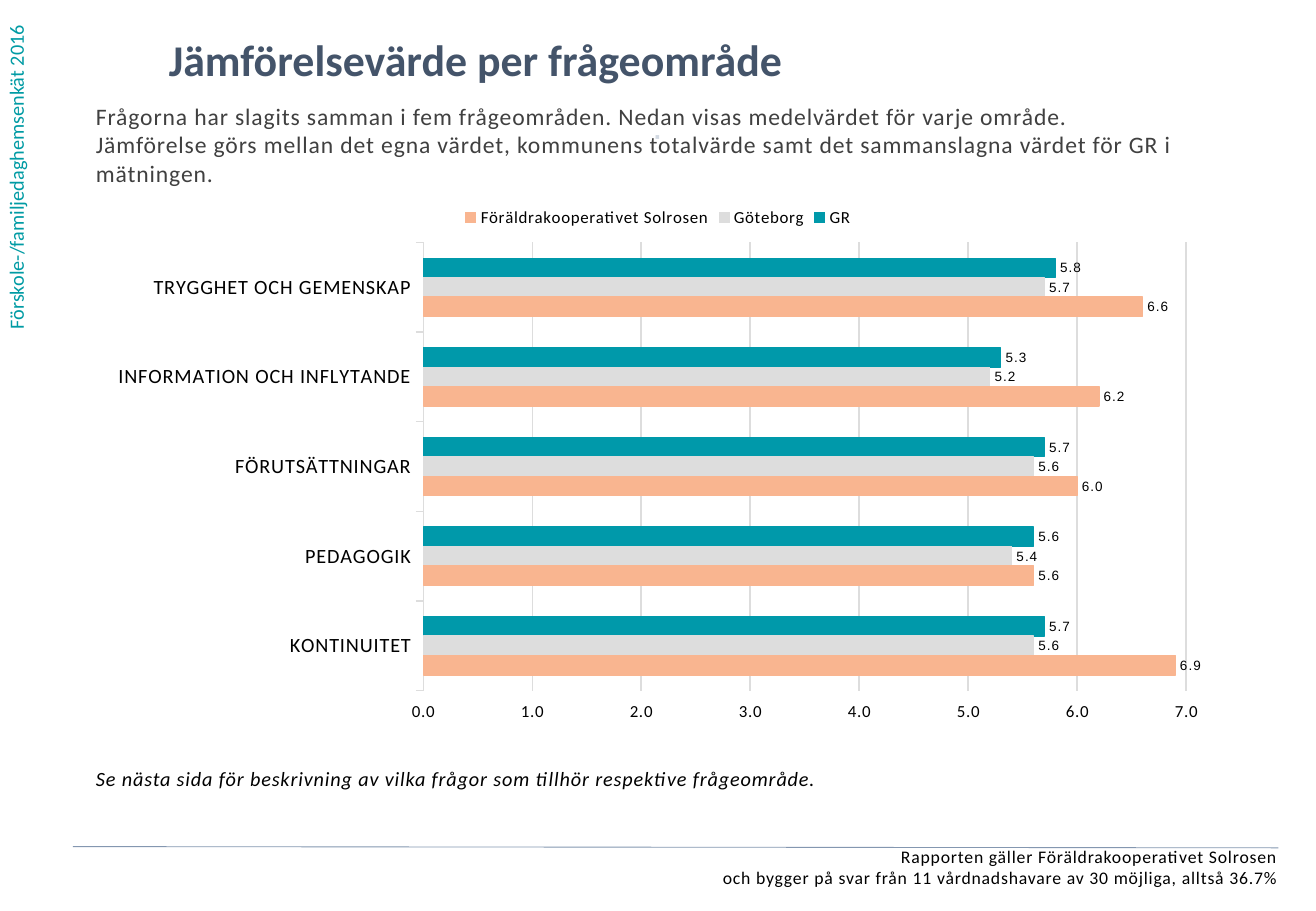
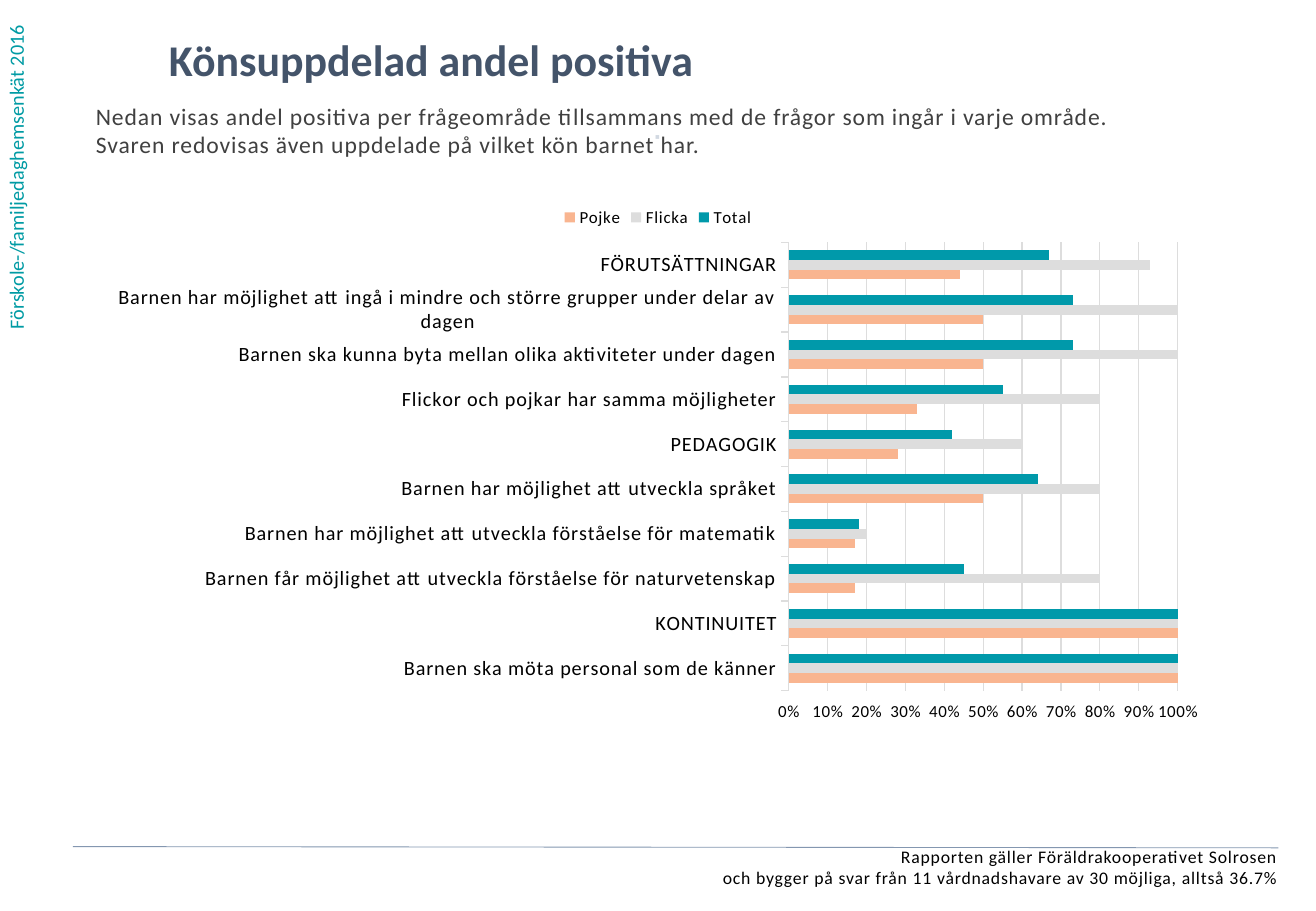
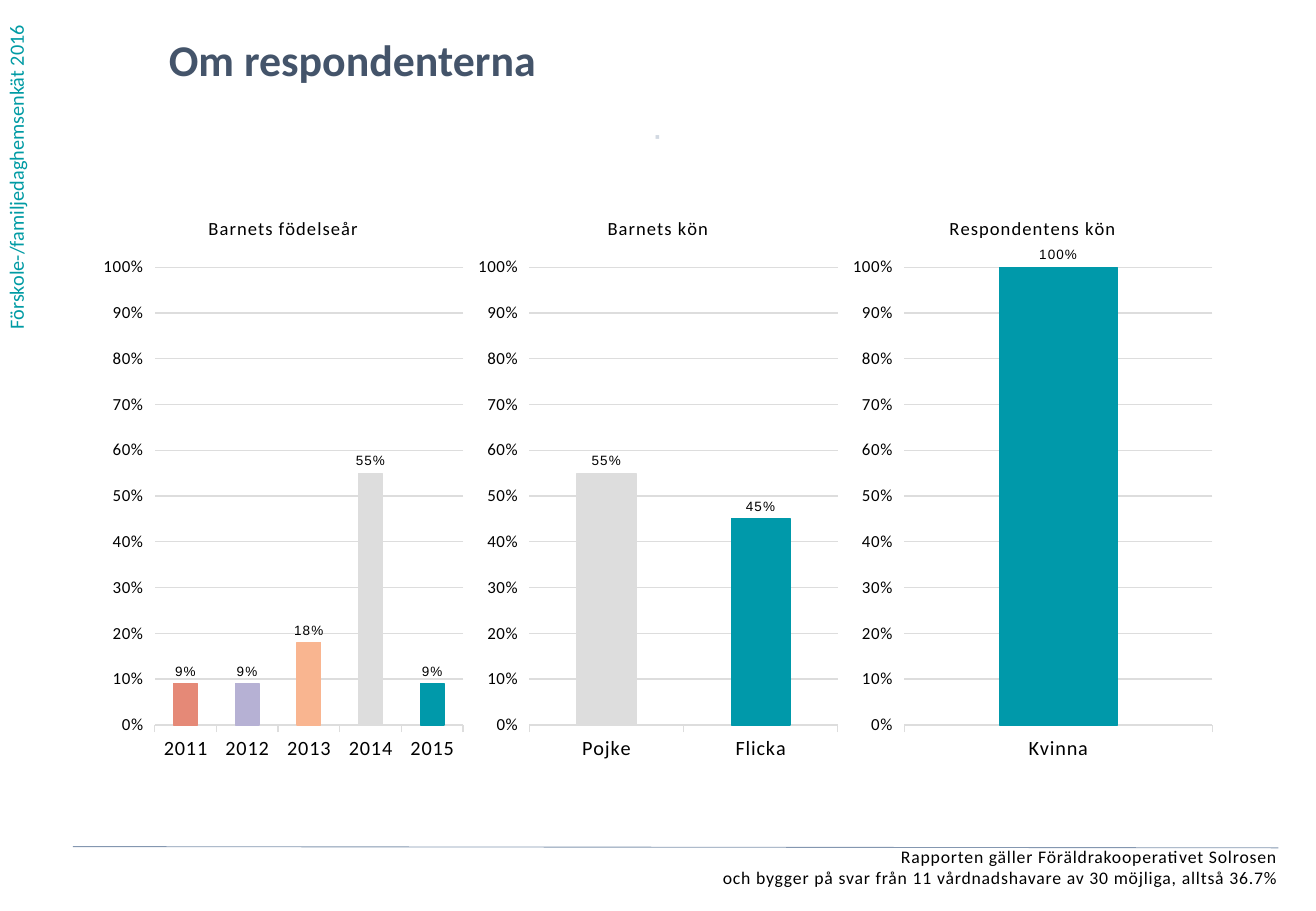
"""Build three survey report slides with shared page furniture and native charts."""
from copy import deepcopy
from dataclasses import dataclass
from typing import Any

from lxml import etree
from pptx import Presentation
from pptx import util as u
from pptx.chart import data as chart_data
from pptx.dml.color import RGBColor
from pptx.enum import chart as ch, shapes, text
from pptx.oxml import ns

WIDTH, HEIGHT = u.Inches(10.83), u.Inches(7.5)
TEAL, GREY, PEACH, LILAC, CORAL = "0099AA", "DDDDDD", "F9B590", "B6B1D4", "E58977"
BLACK = "000000"
LEFT, TOP, CONTENT_WIDTH = 7.29, 21.33, 85.41
SCHOOL = "Föräldrakooperativet Solrosen"
SCORE, PERCENT = "0.0;0.0", "0%;0%"


@dataclass(frozen=True)
class Box:
    """Place on the slide, in percent of its width and height."""
    left: float
    top: float
    width: float
    height: float

    def emu(self) -> tuple[int, int, int, int]:
        """Give the place as lengths."""
        return across(self.left), down(self.top), across(self.width), down(self.height)


@dataclass(frozen=True)
class TextStyle:
    """Look of one kind of text."""
    size: float
    color: str
    bold: bool = False
    italic: bool = False
    spaced: bool = True
    align: text.PP_ALIGN = text.PP_ALIGN.LEFT


@dataclass(frozen=True)
class Label:
    """Text with its place and style."""
    words: str
    box: Box
    style: TextStyle
    inset_top: float = 0


@dataclass(frozen=True)
class Series:
    """Named values drawn in one colour."""
    name: str
    color: str
    values: tuple[float, ...]


@dataclass(frozen=True)
class ChartPlan:
    """Everything that differs between charts."""
    box: Box
    kind: ch.XL_CHART_TYPE
    categories: tuple[str, ...]
    series: tuple[Series, ...]
    number_format: str = PERCENT
    maximum: float = 1
    step: float = 0.1
    labelled: bool = True
    title: str = ""
    point_colors: tuple[str, ...] = ()


@dataclass(frozen=True)
class Page:
    """Content of one slide."""
    title: str
    charts: tuple[ChartPlan, ...]
    intro: str = ""
    note: str = ""


BODY = TextStyle(14, "404040")
NOTE = TextStyle(12, BLACK, italic=True)
TITLE = TextStyle(26, "44546A", bold=True, spaced=False)
INTRO_BOX = Box(LEFT, 11.2, 87.35, 13.47)
NOTE_BOX = Box(LEFT, 80.4, CONTENT_WIDTH, 13.07)
TITLE_BOX = Box(12.83, 3.6, 77.01, 7.6)
SURVEY_BOX = Box(-0.18, 0, 3.69, 37.47)
SURVEY = TextStyle(12, "009BA4", spaced=False)
SHARED = (
    Label(f"Rapporten gäller {SCHOOL}\voch bygger på svar från 11 vårdnadshavare av 30 möjliga, alltså 36.7%",
          Box(1.11, 92.8, 96.03, 5.73), TextStyle(10.5, BLACK, align=text.PP_ALIGN.RIGHT)),
    Label("⋅", Box(35.73, 13.6, 28.44, 5.2),
          TextStyle(12, "D2D9E2", bold=True, align=text.PP_ALIGN.CENTER)),
)


def across(percent: float) -> int:
    """Turn a share of the slide width into a length."""
    return int(WIDTH * percent / 100)


def down(percent: float) -> int:
    """Turn a share of the slide height into a length."""
    return int(HEIGHT * percent / 100)


def rgb(color: str) -> RGBColor:
    """Turn a hex string into a colour."""
    return RGBColor.from_string(color)


def assign(target: Any, **values: Any) -> None:
    """Set each named attribute of the target."""
    for name, value in values.items():
        setattr(target, name, value)


def set_font(font: Any, size: float, color: str = BLACK, face: str = "Calibri",
             bold: bool = False, italic: bool = False, spaced: bool = True) -> None:
    """Format a font, with half a point between letters when spaced."""
    assign(font, size=u.Pt(size), name=face, bold=bold, italic=italic)
    font.color.rgb = rgb(color)
    if spaced:
        font._rPr.set("spc", "50")


def set_line(line: Any, color: str, points: float = 0.75) -> None:
    """Give a line its colour and width."""
    line.color.rgb = rgb(color)
    line.width = u.Pt(points)


def write(frame: Any, words: str, style: TextStyle) -> None:
    """Fill a text frame with one styled paragraph."""
    frame.word_wrap = True
    paragraph = frame.paragraphs[0]
    paragraph.text = words
    paragraph.alignment = style.align
    for run in paragraph.runs:
        set_font(run.font, style.size, style.color, bold=style.bold,
                 italic=style.italic, spaced=style.spaced)
    for line_break in paragraph._p.xpath("a:br"):
        line_break.append(deepcopy(paragraph.runs[0].font._rPr))


def add_label(slide: Any, label: Label) -> None:
    """Draw a text without side insets."""
    frame = slide.shapes.add_textbox(*label.box.emu()).text_frame
    assign(frame, margin_left=0, margin_right=0, margin_bottom=0,
           margin_top=u.Inches(label.inset_top))
    write(frame, label.words, label.style)


def add_furniture(slide: Any) -> None:
    """Draw the survey name, footer and rule that every slide has."""
    survey = slide.shapes.add_textbox(*SURVEY_BOX.emu()).text_frame
    survey._txBody.bodyPr.set("vert", "vert270")
    write(survey, "Förskole-/familjedaghemsenkät 2016", SURVEY)
    for label in SHARED:
        add_label(slide, label)
    rule = slide.shapes.add_connector(shapes.MSO_CONNECTOR.STRAIGHT, across(5.54),
                                      down(92.93), across(97.14), down(93.07))
    set_line(rule.line, "8497B0", 0.5)
    etree.SubElement(rule._element.spPr, ns.qn("a:effectLst"))


def format_axes(chart: Any, plan: ChartPlan) -> None:
    """Reverse the categories and scale the values."""
    categories, values = chart.category_axis, chart.value_axis
    assign(categories, reverse_order=True, major_tick_mark=ch.XL_TICK_MARK.OUTSIDE,
           has_major_gridlines=False)
    set_line(categories.format.line, GREY)
    set_font(categories.tick_labels.font, 12)
    assign(values, minimum_scale=0, maximum_scale=plan.maximum, major_unit=plan.step,
           major_tick_mark=ch.XL_TICK_MARK.OUTSIDE, has_major_gridlines=True,
           tick_label_position=ch.XL_TICK_LABEL_POSITION.HIGH)
    set_line(values.major_gridlines.format.line, GREY)
    values.format.line.fill.background()
    assign(values.tick_labels, number_format=plan.number_format, number_format_is_linked=False)
    set_font(values.tick_labels.font, 10, spaced=False)


def paint(part: Any, color: str, outlined: bool) -> None:
    """Fill a series or point, with a matching outline if wanted."""
    part.format.fill.solid()
    part.format.fill.fore_color.rgb = rgb(color)
    if outlined:
        set_line(part.format.line, color)


def format_series(plot: Any, plan: ChartPlan) -> None:
    """Colour the bars and label their values."""
    assign(plot, gap_width=162, vary_by_categories=False)
    for drawn, series in zip(plot.series, plan.series):
        paint(drawn, series.color, plan.labelled)
        for index, color in enumerate(plan.point_colors):
            paint(drawn.points[index], color, True)
        if plan.labelled:
            labels = drawn.data_labels
            assign(labels, show_value=True, number_format=plan.number_format,
                   number_format_is_linked=False, position=ch.XL_LABEL_POSITION.OUTSIDE_END)
            set_font(labels.font, 8, face="Arial")


def add_chart(slide: Any, plan: ChartPlan) -> None:
    """Draw one bar or column chart."""
    data = chart_data.CategoryChartData(number_format=plan.number_format)
    data.categories = plan.categories
    for series in plan.series:
        data.add_series(series.name, series.values)
    chart = slide.shapes.add_chart(plan.kind, *plan.box.emu(), data).chart
    set_font(chart.font, 10)
    assign(chart, has_title=bool(plan.title), has_legend=not plan.title)
    if plan.title:
        heading = chart.chart_title.text_frame
        heading.text = plan.title
        set_font(heading.paragraphs[0].runs[0].font, 11)
        chart.chart_title.include_in_layout = False
    else:
        assign(chart.legend, position=ch.XL_LEGEND_POSITION.TOP, include_in_layout=False)
        set_font(chart.legend.font, 10)
    format_axes(chart, plan)
    format_series(chart.plots[0], plan)


def bars(categories: tuple[str, ...], *series: Series, **options: Any) -> ChartPlan:
    """Plan a full-width bar chart."""
    return ChartPlan(Box(LEFT, TOP, CONTENT_WIDTH, 59.07), ch.XL_CHART_TYPE.BAR_CLUSTERED,
                     categories, series, **options)


def columns(column: int, title: str, shares: dict[str, float]) -> ChartPlan:
    """Plan a column chart in one third of the content width."""
    width = CONTENT_WIDTH / 3
    return ChartPlan(Box(LEFT + column * width, TOP, width, 63.47),
                     ch.XL_CHART_TYPE.COLUMN_CLUSTERED, tuple(shares),
                     (Series("Series 1", TEAL, tuple(shares.values())),), title=title,
                     point_colors=(TEAL, GREY, PEACH, LILAC, CORAL)[:len(shares)])


PAGES = (
    Page(
        "Jämförelsevärde per frågeområde",
        (bars(
            ("TRYGGHET OCH GEMENSKAP", "INFORMATION OCH INFLYTANDE", "FÖRUTSÄTTNINGAR",
             "PEDAGOGIK", "KONTINUITET"),
            Series("GR", TEAL, (5.8, 5.3, 5.7, 5.6, 5.7)),
            Series("Göteborg", GREY, (5.7, 5.2, 5.6, 5.4, 5.6)),
            Series(SCHOOL, PEACH, (6.6, 6.2, 6, 5.6, 6.9)),
            number_format=SCORE, maximum=7, step=1),),
        "Frågorna har slagits samman i fem frågeområden. Nedan visas medelvärdet för varje område.\v"
        "Jämförelse görs mellan det egna värdet, kommunens totalvärde samt det sammanslagna "
        "värdet för GR i mätningen.",
        "Se nästa sida för beskrivning av vilka frågor som tillhör respektive frågeområde."),
    Page(
        "Könsuppdelad andel positiva",
        (bars(
            ("FÖRUTSÄTTNINGAR",
             "Barnen har möjlighet att ingå i mindre och större grupper under delar av dagen",
             "Barnen ska kunna byta mellan olika aktiviteter under dagen",
             "Flickor och pojkar har samma möjligheter",
             "PEDAGOGIK",
             "Barnen har möjlighet att utveckla språket",
             "Barnen har möjlighet att utveckla förståelse för matematik",
             "Barnen får möjlighet att utveckla förståelse för naturvetenskap",
             "KONTINUITET",
             "Barnen ska möta personal som de känner"),
            Series("Total", TEAL, (0.67, 0.73, 0.73, 0.55, 0.42, 0.64, 0.18, 0.45, 1, 1)),
            Series("Flicka", GREY, (0.93, 1, 1, 0.8, 0.6, 0.8, 0.2, 0.8, 1, 1)),
            Series("Pojke", PEACH, (0.44, 0.5, 0.5, 0.33, 0.28, 0.5, 0.17, 0.17, 1, 1)),
            labelled=False),),
        "Nedan visas andel positiva per frågeområde tillsammans med de frågor som ingår i varje område.\v"
        "Svaren redovisas även uppdelade på vilket kön barnet har."),
    Page(
        "Om respondenterna",
        (columns(0, "Barnets födelseår",
                 {"2015": 0.09, "2014": 0.55, "2013": 0.18, "2012": 0.09, "2011": 0.09}),
         columns(1, "Barnets kön", {"Flicka": 0.45, "Pojke": 0.55}),
         columns(2, "Respondentens kön", {"Kvinna": 1}))),
)


def add_page(deck: Any, page: Page) -> None:
    """Add one slide with its furniture, texts and charts."""
    slide = deck.slides.add_slide(deck.slide_layouts[6])
    add_furniture(slide)
    labels = (Label(page.title, TITLE_BOX, TITLE), Label(page.intro, INTRO_BOX, BODY),
              Label(page.note, NOTE_BOX, NOTE, inset_top=0.35))
    for label in labels:
        if label.words:
            add_label(slide, label)
    for plan in page.charts:
        add_chart(slide, plan)


def main() -> None:
    """Build and save the presentation."""
    deck = Presentation()
    assign(deck, slide_width=WIDTH, slide_height=HEIGHT)
    for page in PAGES:
        add_page(deck, page)
    deck.save("out.pptx")


if __name__ == "__main__":
    main()
